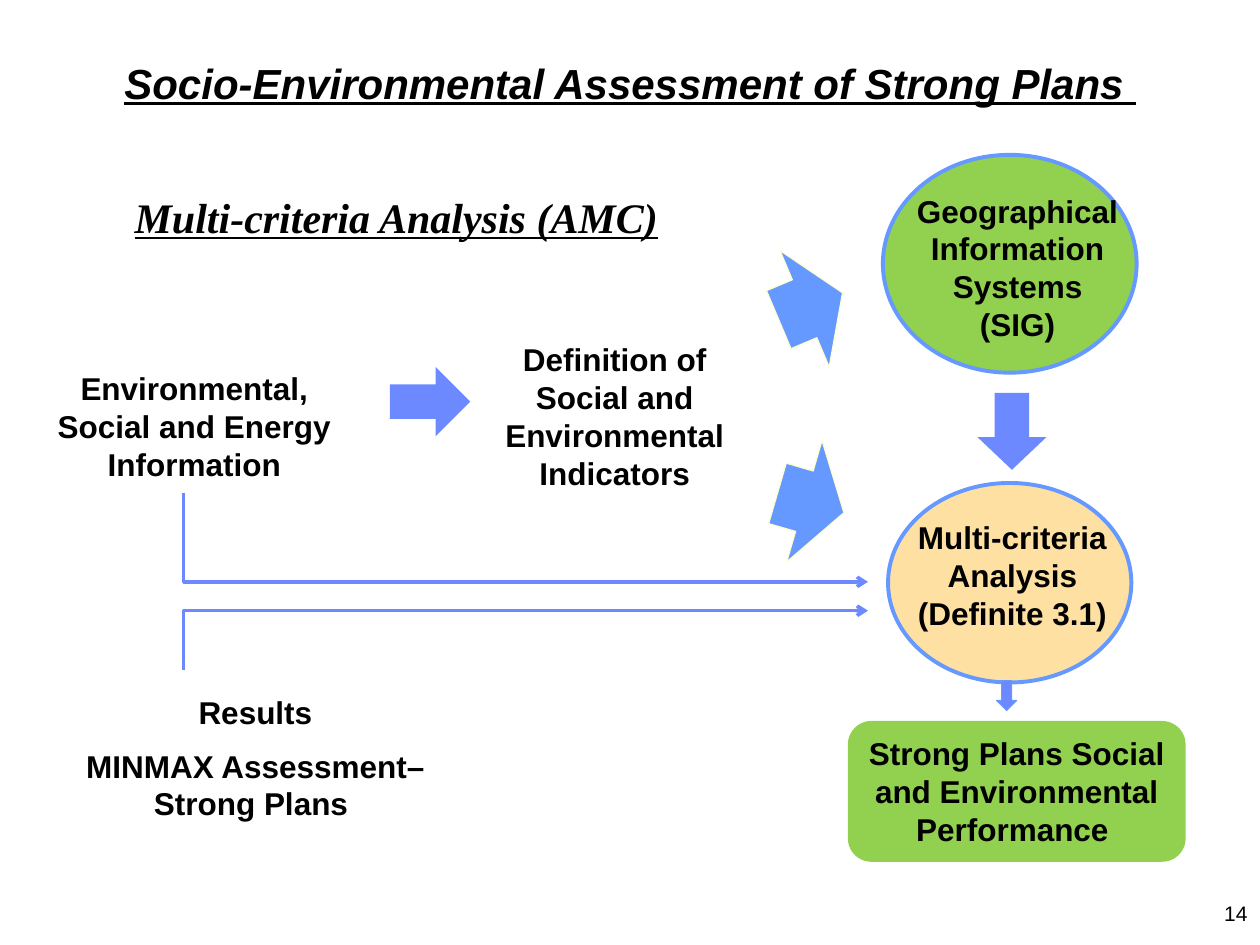
from pptx import Presentation
from pptx.util import Pt
from pptx.dml.color import RGBColor
from pptx.enum.shapes import MSO_CONNECTOR, MSO_SHAPE
from pptx.enum.text import MSO_ANCHOR, PP_ALIGN
from pptx.oxml.ns import qn
from lxml import etree

BLACK, GREEN, CREAM = "000000", "92D050", "FFE0A3"
BLUE, VIOLET, PALE = "6699FF", "6D89FF", "FFFFCC"


def rgb(value):
    return RGBColor.from_string(value)


def write(sp, lines, size=18, font="Arial", bold=True, fancy=False,
          align=PP_ALIGN.CENTER, anchor=MSO_ANCHOR.TOP, gap=0):
    tf = sp.text_frame
    tf.word_wrap = True
    tf.vertical_anchor = anchor
    for i, line in enumerate(lines):
        p = tf.paragraphs[0] if i == 0 else tf.add_paragraph()
        p.text = line
        p.alignment = align
        if i:
            p.space_before = Pt(gap)
        p.font.name, p.font.size, p.font.bold = font, Pt(size), bold
        p.font.color.rgb = rgb(BLACK)
        if fancy:
            p.font.italic = p.font.underline = True


def add_label(s, box, *lines, **style):
    write(s.shapes.add_textbox(*map(Pt, box)), lines, **style)


def add_block(s, kind, box, fill, line=None, width=0.63, rotation=0, adj=()):
    sp = s.shapes.add_shape(kind, *map(Pt, box))
    sp.shadow.inherit = False
    sp.rotation = rotation
    for i, value in enumerate(adj):
        sp.adjustments[i] = value
    sp.fill.solid()
    sp.fill.fore_color.rgb = rgb(fill)
    if line:
        sp.line.color.rgb = rgb(line)
        sp.line.width = Pt(width)
    else:
        sp.line.fill.background()
    return sp


def add_elbow(s, x1, y1, x2, y2):
    c = s.shapes.add_connector(MSO_CONNECTOR.ELBOW, Pt(x1), Pt(y1), Pt(x2), Pt(y2))
    c.line.color.rgb = rgb(VIOLET)
    c.line.width = Pt(2)
    # Turn at the starting edge, arrowhead at the end, no shadow
    props = c._element.spPr
    guides = props.find(qn("a:prstGeom")).find(qn("a:avLst"))
    etree.SubElement(guides, qn("a:gd"), name="adj1", fmla="val 0")
    etree.SubElement(props.find(qn("a:ln")), qn("a:tailEnd"), type="arrow")
    etree.SubElement(props, qn("a:effectLst"))


def main():
    prs = Presentation()
    prs.slide_width, prs.slide_height = Pt(720), Pt(540)
    s = prs.slides.add_slide(prs.slide_layouts[6])

    # Result box and method ellipses
    result = add_block(s, MSO_SHAPE.ROUNDED_RECTANGLE, (484.5, 412, 193, 80.5),
                       GREEN, adj=[0.167])
    write(result, ["Strong Plans Social and Environmental Performance "])
    add_block(s, MSO_SHAPE.OVAL, (504.5, 88.5, 145, 124.5), GREEN, BLUE, 2.25)
    add_block(s, MSO_SHAPE.OVAL, (507.5, 276, 139, 114), CREAM, BLUE, 2.25)

    # Headings
    add_label(s, (31, 29, 658, 36), "Socio-Environmental Assessment of Strong Plans ",
              size=24, fancy=True, anchor=MSO_ANCHOR.MIDDLE)
    add_label(s, (36.5, 106, 380, 80), "Multi-criteria Analysis (AMC)",
              size=24, font="Times New Roman", fancy=True)

    # Step labels
    add_label(s, (513.5, 106, 136, 94), "Geographical Information Systems (SIG)")
    add_label(s, (272, 191, 158.5, 94),
              "Definition of Social and Environmental Indicators")
    add_label(s, (14.5, 207.5, 193, 73),
              "Environmental, Social and Energy Information")
    add_label(s, (507.5, 292.5, 142, 73), "Multi-criteria Analysis", "(Definite 3.1)")
    add_label(s, (30, 392.5, 232, 83.5), "Results",
              "MINMAX Assessment– Strong Plans ", gap=9)

    # Block arrows from the indicators to both methods
    for y, rotation in ((139, 337.1), (251.5, 16.2)):
        add_block(s, MSO_SHAPE.RIGHT_ARROW, (443.5, y, 39.5, 72), BLUE, PALE,
                  rotation=rotation, adj=[0.499, 0.594])

    # Block arrows between steps
    down = MSO_SHAPE.DOWN_ARROW
    add_block(s, down, (226, 206.5, 39.5, 46), VIOLET, rotation=270)
    add_block(s, down, (558.5, 224.5, 39.5, 44), VIOLET, adj=[0.5, 0.474])
    add_block(s, down, (569.5, 389, 11.5, 17), VIOLET, BLUE)

    # Elbow arrows into the multi-criteria analysis
    add_elbow(s, 105, 281.5, 496, 332.5)
    add_elbow(s, 105, 383, 496, 349)

    # Slide number
    add_label(s, (570, 504, 150, 36), "14", size=12, bold=False,
              align=PP_ALIGN.RIGHT, anchor=MSO_ANCHOR.MIDDLE)

    prs.save("out.pptx")


if __name__ == "__main__":
    main()
